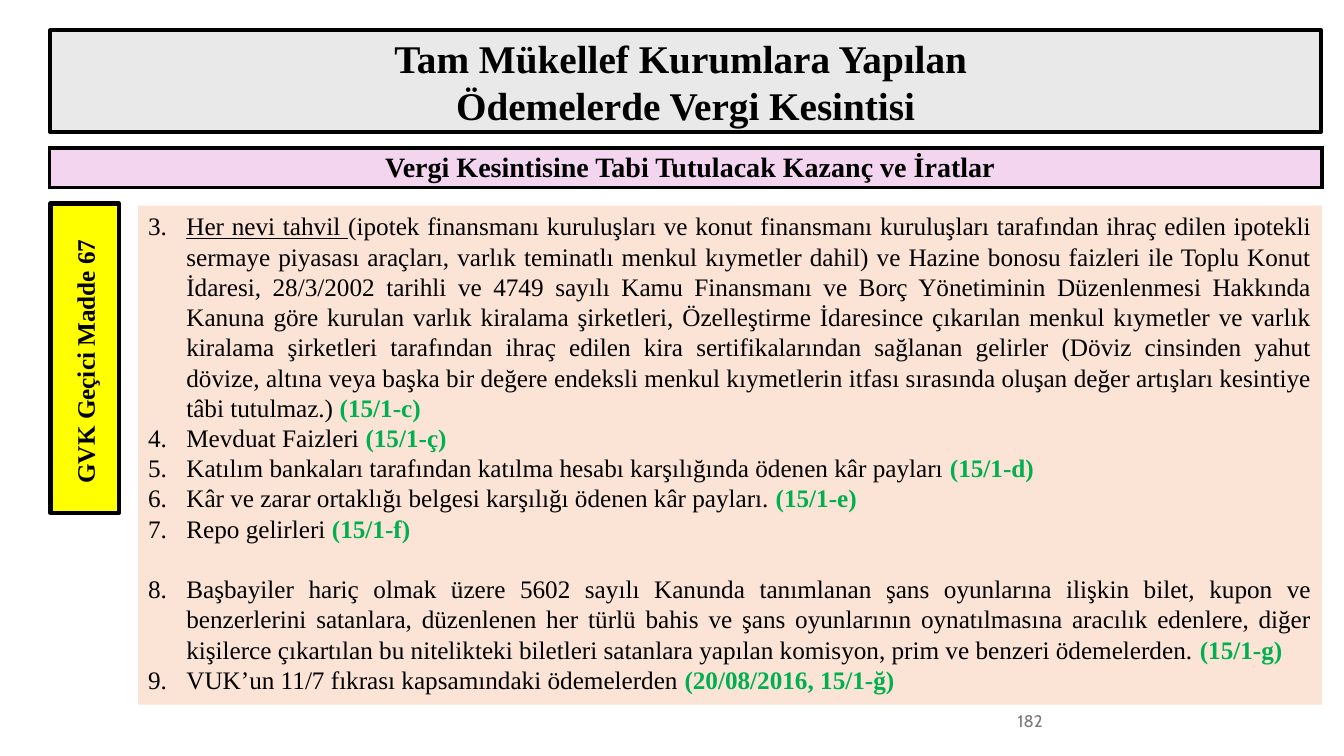
import pptx
import pptx.dml.color
import pptx.enum.shapes
import pptx.enum.text
import pptx.oxml.ns
import pptx.util
from lxml import etree

SERIF = "Times New Roman"
BLACK, GREEN = "000000", "00B050"
TITLE = "Tam Mükellef Kurumlara Yapılan \vÖdemelerde Vergi Kesintisi"
SUBTITLE = "Vergi Kesintisine Tabi Tutulacak Kazanç ve İratlar"
LAW = "GVK Geçici Madde 67 "
PAGE = "182"
FIRST_NUMBER = 3
SPACED_ITEM = 8
# (underlined opening, body, article reference)
INCOMES = [
    ("Her nevi tahvil ",
     "(ipotek finansmanı kuruluşları ve konut finansmanı kuruluşları tarafından ihraç edilen "
     "ipotekli sermaye piyasası araçları, varlık teminatlı menkul kıymetler dahil) ve Hazine "
     "bonosu faizleri ile Toplu Konut İdaresi, 28/3/2002 tarihli ve 4749 sayılı Kamu Finansmanı "
     "ve Borç Yönetiminin Düzenlenmesi Hakkında Kanuna göre kurulan varlık kiralama şirketleri, "
     "Özelleştirme İdaresince çıkarılan menkul kıymetler ve varlık kiralama şirketleri tarafından "
     "ihraç edilen kira sertifikalarından sağlanan gelirler (Döviz cinsinden yahut dövize, altına "
     "veya başka bir değere endeksli menkul kıymetlerin itfası sırasında oluşan değer artışları "
     "kesintiye tâbi tutulmaz.) ", "(15/1-c)"),
    ("", "Mevduat Faizleri ", "(15/1-ç)"),
    ("", "Katılım bankaları tarafından katılma hesabı karşılığında ödenen kâr payları ", "(15/1-d)"),
    ("", "Kâr ve zarar ortaklığı belgesi karşılığı ödenen kâr payları. ", "(15/1-e)"),
    ("", "Repo gelirleri ", "(15/1-f)"),
    ("", "Başbayiler hariç olmak üzere 5602 sayılı Kanunda tanımlanan şans oyunlarına ilişkin "
     "bilet, kupon ve benzerlerini satanlara, düzenlenen her türlü bahis ve şans oyunlarının "
     "oynatılmasına aracılık edenlere, diğer kişilerce çıkartılan bu nitelikteki biletleri "
     "satanlara yapılan komisyon, prim ve benzeri ödemelerden. ", "(15/1-g)"),
    ("", "VUK’un 11/7 fıkrası kapsamındaki ödemelerden ", "(20/08/2016, 15/1-ğ)"),
]

WIDTH, HEIGHT = 13.33, 7.5
LEFT, RIGHT = 0.5, 13.1
BODY_LEFT = 1.37
TITLE_BOX = (LEFT, 0.3, RIGHT - LEFT, 1.01)
SUBTITLE_BOX = (LEFT - 0.01, 1.47, RIGHT - LEFT + 0.02, 0.39)
LAW_BOX = (LEFT, 2.02, 0.68, 3.07)
INCOME_BOX = (BODY_LEFT, 2.04, RIGHT + 0.01 - BODY_LEFT, 4.95)
PAGE_BOX = (7.17, 6.95, 3.27, 0.4)
INDENT = 0.38
BORDER = 3

ALIGN = pptx.enum.text.PP_ALIGN
MIDDLE = pptx.enum.text.MSO_ANCHOR.MIDDLE


def inches(lengths):
    return [pptx.util.Inches(length) for length in lengths]


def rgb(code):
    return pptx.dml.color.RGBColor.from_string(code)


def child(parent, tag, **attributes):
    return etree.SubElement(parent, pptx.oxml.ns.qn(tag), attributes)


def paint(fill, code, opacity=100):
    fill.solid()
    fill.fore_color.rgb = rgb(code)
    if opacity < 100:
        for colour in fill._xPr.iter(pptx.oxml.ns.qn("a:srgbClr")):
            child(colour, "a:alpha", val=str(opacity * 1000))


def write(paragraph, text, size, colour=BLACK, **formats):
    run = paragraph.add_run()
    run.text = text
    run.font.color.rgb = rgb(colour)
    formats = {"name": SERIF, "size": pptx.util.Pt(size), **formats}
    for name, value in formats.items():
        setattr(run.font, name, value)


def panel(slide, box, colour, opacity=100, bordered=True):
    shape = slide.shapes.add_shape(pptx.enum.shapes.MSO_SHAPE.RECTANGLE, *inches(box))
    shape.shadow.inherit = False
    paint(shape.fill, colour, opacity)
    if bordered:
        paint(shape.line.fill, BLACK)
        shape.line.width = pptx.util.Pt(BORDER)
    else:
        shape.line.fill.background()
    frame = shape.text_frame
    frame.word_wrap = True
    frame.vertical_anchor = MIDDLE
    frame.paragraphs[0].alignment = ALIGN.CENTER
    return frame


def subtitle_table(slide):
    table = slide.shapes.add_table(1, 1, *inches(SUBTITLE_BOX)).table
    cell = table.cell(0, 0)
    cell.vertical_anchor = MIDDLE
    for side in ("left", "right", "top", "bottom"):
        setattr(cell, f"margin_{side}", 0)
    properties = cell._tc.get_or_add_tcPr()
    for edge in ("a:lnL", "a:lnR", "a:lnT", "a:lnB"):
        line = child(properties, edge, w=str(pptx.util.Pt(BORDER)))
        child(child(line, "a:solidFill"), "a:srgbClr", val=BLACK)
    paint(cell.fill, "E59EDD", 43)
    paragraph = cell.text_frame.paragraphs[0]
    paragraph.alignment = ALIGN.CENTER
    paragraph._p.get_or_add_pPr().set("marL", str(pptx.util.Inches(0.09)))
    write(paragraph, SUBTITLE, 20, bold=True)


def income_list(slide):
    frame = panel(slide, INCOME_BOX, "FBE3D6", bordered=False)
    frame.vertical_anchor = pptx.enum.text.MSO_ANCHOR.TOP
    frame.auto_size = pptx.enum.text.MSO_AUTO_SIZE.SHAPE_TO_FIT_TEXT
    indent = pptx.util.Inches(INDENT)
    for number, (opening, body, article) in enumerate(INCOMES, FIRST_NUMBER):
        first = number == FIRST_NUMBER
        paragraph = frame.paragraphs[0] if first else frame.add_paragraph()
        paragraph.alignment = ALIGN.JUSTIFY
        if number == SPACED_ITEM:
            paragraph.space_before = pptx.util.Pt(21.6)
        properties = paragraph._p.get_or_add_pPr()
        properties.set("marL", str(indent))
        properties.set("indent", str(-indent))
        child(properties, "a:buFont", typeface="+mj-lt")
        child(properties, "a:buAutoNum", type="arabicPeriod", startAt=str(FIRST_NUMBER))
        if opening:
            write(paragraph, opening, 18, underline=True)
        write(paragraph, body, 18)
        write(paragraph, article, 18, GREEN, bold=True)


def page_number(slide):
    frame = slide.shapes.add_textbox(*inches(PAGE_BOX)).text_frame
    frame.word_wrap = True
    frame.vertical_anchor = MIDDLE
    frame.paragraphs[0].alignment = ALIGN.RIGHT
    write(frame.paragraphs[0], PAGE, 12, "797979", name="Cabin")


def main():
    deck = pptx.Presentation()
    deck.slide_width, deck.slide_height = inches((WIDTH, HEIGHT))
    slide = deck.slides.add_slide(deck.slide_layouts[6])
    page_number(slide)
    title = panel(slide, TITLE_BOX, "D9D9D9", 57)
    title_lines = TITLE.split("\v")
    for index, line in enumerate(title_lines):
        if index:
            title.paragraphs[0].add_line_break()
        write(title.paragraphs[0], line, 28, bold=True)
    subtitle_table(slide)
    income_list(slide)
    law = panel(slide, LAW_BOX, "FFFF00")
    law._txBody.bodyPr.set("vert", "vert270")
    write(law.paragraphs[0], LAW, 18, bold=True)
    deck.save("out.pptx")


if __name__ == "__main__":
    main()
